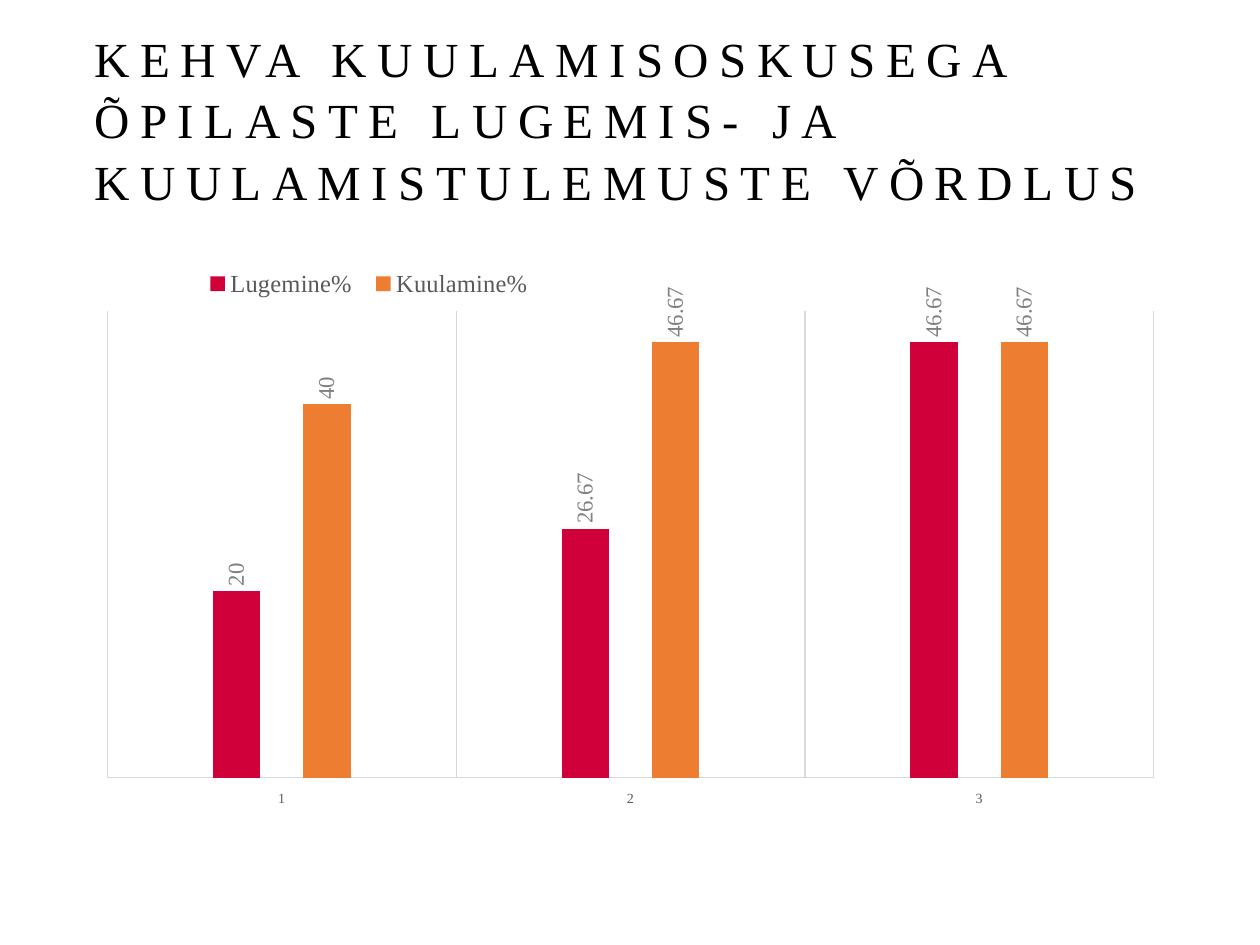
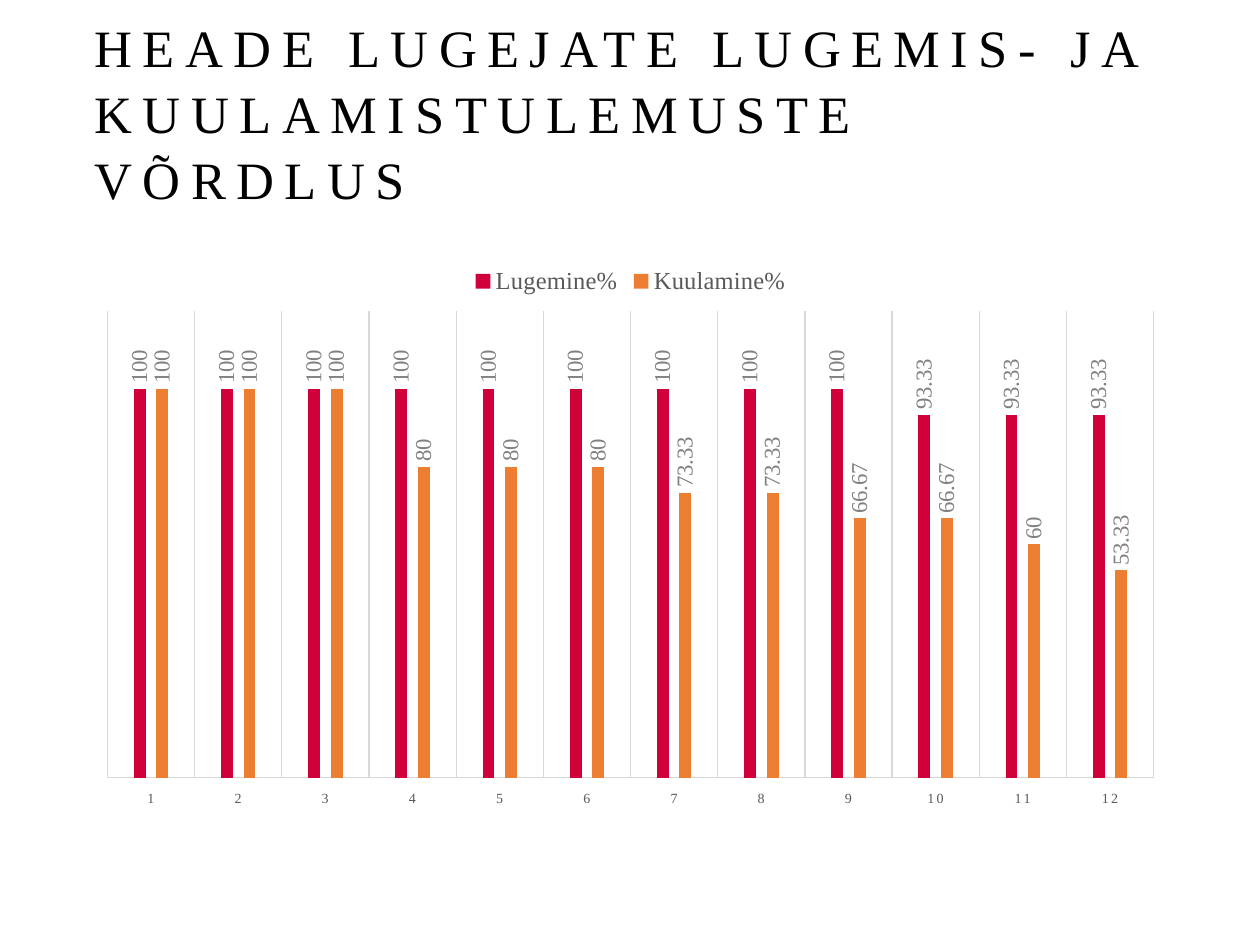
from lxml import etree
from pptx import Presentation
from pptx.chart.data import CategoryChartData
from pptx.dml.color import RGBColor
from pptx.enum.chart import XL_CHART_TYPE, XL_LABEL_POSITION, XL_LEGEND_POSITION, XL_TICK_LABEL_POSITION, XL_TICK_MARK
from pptx.enum.text import MSO_ANCHOR, MSO_AUTO_SIZE, PP_ALIGN
from pptx.oxml.ns import qn
from pptx.util import Inches, Pt

CLUSTERED = XL_CHART_TYPE.COLUMN_CLUSTERED
OUTSIDE_END = XL_LABEL_POSITION.OUTSIDE_END
LEGEND_TOP = XL_LEGEND_POSITION.TOP
LABELS_LOW = XL_TICK_LABEL_POSITION.LOW
NO_TICKS = XL_TICK_MARK.NONE
BOTTOM = MSO_ANCHOR.BOTTOM
NO_AUTOFIT = MSO_AUTO_SIZE.NONE
LEFT = PP_ALIGN.LEFT

FONT = "Times New Roman"
BLACK = RGBColor(0x00, 0x00, 0x00)
DARK_GRAY = RGBColor(0x59, 0x59, 0x59)
LABEL_GRAY = RGBColor(0x80, 0x80, 0x80)
LINE_GRAY = RGBColor(0xD9, 0xD9, 0xD9)
SERIES_COLORS = [RGBColor(0xCF, 0x00, 0x3A), RGBColor(0xED, 0x7D, 0x31)]

TITLE_BOX = [Inches(n) for n in (0.65, 0.34, 8.71, 1.35)]
CHART_BOX = [Inches(n) for n in (0.68, 2.01, 8.65, 4.42)]
PLOT_SHARES = (0.02, 0.104, 0.96, 0.838)

COMPARISONS = [
    {
        "title": "KEHVA KUULAMISOSKUSEGA ÕPILASTE LUGEMIS- JA KUULAMISTULEMUSTE VÕRDLUS",
        "title_size": 28,
        "reading": [20, 26.67, 46.67],
        "listening": [40, 46.67, 46.67],
        "axis_top": 50,
        "legend_shares": (0.1, 0.02, 0.32, 0.07),
    },
    {
        "title": "HEADE LUGEJATE LUGEMIS- JA KUULAMISTULEMUSTE VÕRDLUS",
        "title_size": 30,
        "reading": [100] * 9 + [93.33] * 3,
        "listening": [100] * 3 + [80] * 3 + [73.33] * 2 + [66.67] * 2 + [60, 53.33],
        "axis_top": 120,
        "legend_shares": None,
    },
]


def style_font(font, size, color):
    font.name = FONT
    font.size = Pt(size)
    font.bold = False
    font.color.rgb = color


def place_by_shares(element, shares, successors, inner=False):
    for old_layout in element.findall(qn("c:layout")):
        element.remove(old_layout)
    layout = etree.Element(qn("c:layout"))
    manual = etree.SubElement(layout, qn("c:manualLayout"))
    if inner:
        etree.SubElement(manual, qn("c:layoutTarget")).set("val", "inner")
    for mode in ("xMode", "yMode"):
        etree.SubElement(manual, qn("c:" + mode)).set("val", "edge")
    for name, share in zip("xywh", shares):
        etree.SubElement(manual, qn("c:" + name)).set("val", str(share))
    following = next(child for child in element if child.tag in [qn(tag) for tag in successors])
    following.addprevious(layout)


presentation = Presentation()
presentation.slide_width = Inches(10)
presentation.slide_height = Inches(7.5)
title_only = presentation.slide_layouts[5]

for comparison in COMPARISONS:
    slide = presentation.slides.add_slide(title_only)

    title = slide.shapes.title
    title.left, title.top, title.width, title.height = TITLE_BOX
    frame = title.text_frame
    frame.text = comparison["title"]
    frame.word_wrap = True
    frame.auto_size = NO_AUTOFIT
    frame.vertical_anchor = BOTTOM
    frame.margin_bottom = Inches(0.02)
    paragraph = frame.paragraphs[0]
    paragraph.alignment = LEFT
    paragraph.line_spacing = 1.05
    style_font(paragraph.font, comparison["title_size"], BLACK)
    paragraph.runs[0].font._element.set("spc", "600")

    chart_data = CategoryChartData()
    chart_data.categories = [str(n + 1) for n in range(len(comparison["reading"]))]
    chart_data.add_series("Lugemine%", comparison["reading"])
    chart_data.add_series("Kuulamine%", comparison["listening"])
    chart = slide.shapes.add_chart(CLUSTERED, *CHART_BOX, chart_data).chart
    chart.has_title = False
    style_font(chart.font, 10, BLACK)

    plot = chart.plots[0]
    plot.gap_width = 444
    plot.overlap = -90
    plot.vary_by_categories = False
    for series, color in zip(plot.series, SERIES_COLORS):
        series.format.fill.solid()
        series.format.fill.fore_color.rgb = color
        labels = series.data_labels
        labels.show_value = True
        labels.position = OUTSIDE_END
        style_font(labels.font, 13, LABEL_GRAY)
        label_body = labels._element.find(".//" + qn("a:bodyPr"))
        label_body.set("rot", "-5400000")
        label_body.set("vert", "horz")

    category_axis = chart.category_axis
    category_axis.major_tick_mark = NO_TICKS
    category_axis.minor_tick_mark = NO_TICKS
    category_axis.tick_label_position = LABELS_LOW
    category_axis.has_major_gridlines = True
    for line in (category_axis.format.line, category_axis.major_gridlines.format.line):
        line.color.rgb = LINE_GRAY
        line.width = Pt(0.75)
    style_font(category_axis.tick_labels.font, 8, DARK_GRAY)
    category_axis.tick_labels.font._element.set("spc", "120")

    value_axis = chart.value_axis
    value_axis.has_major_gridlines = False
    value_axis.minimum_scale = 0
    value_axis.maximum_scale = comparison["axis_top"]
    value_axis.visible = False

    chart.has_legend = True
    legend = chart.legend
    legend.position = LEGEND_TOP
    legend.include_in_layout = False
    style_font(legend.font, 14, DARK_GRAY)
    if comparison["legend_shares"]:
        place_by_shares(legend._element, comparison["legend_shares"], ["c:overlay"])
    plot_area = chart._chartSpace.find(".//" + qn("c:plotArea"))
    place_by_shares(plot_area, PLOT_SHARES, ["c:barChart"], inner=True)

presentation.save("out.pptx")
